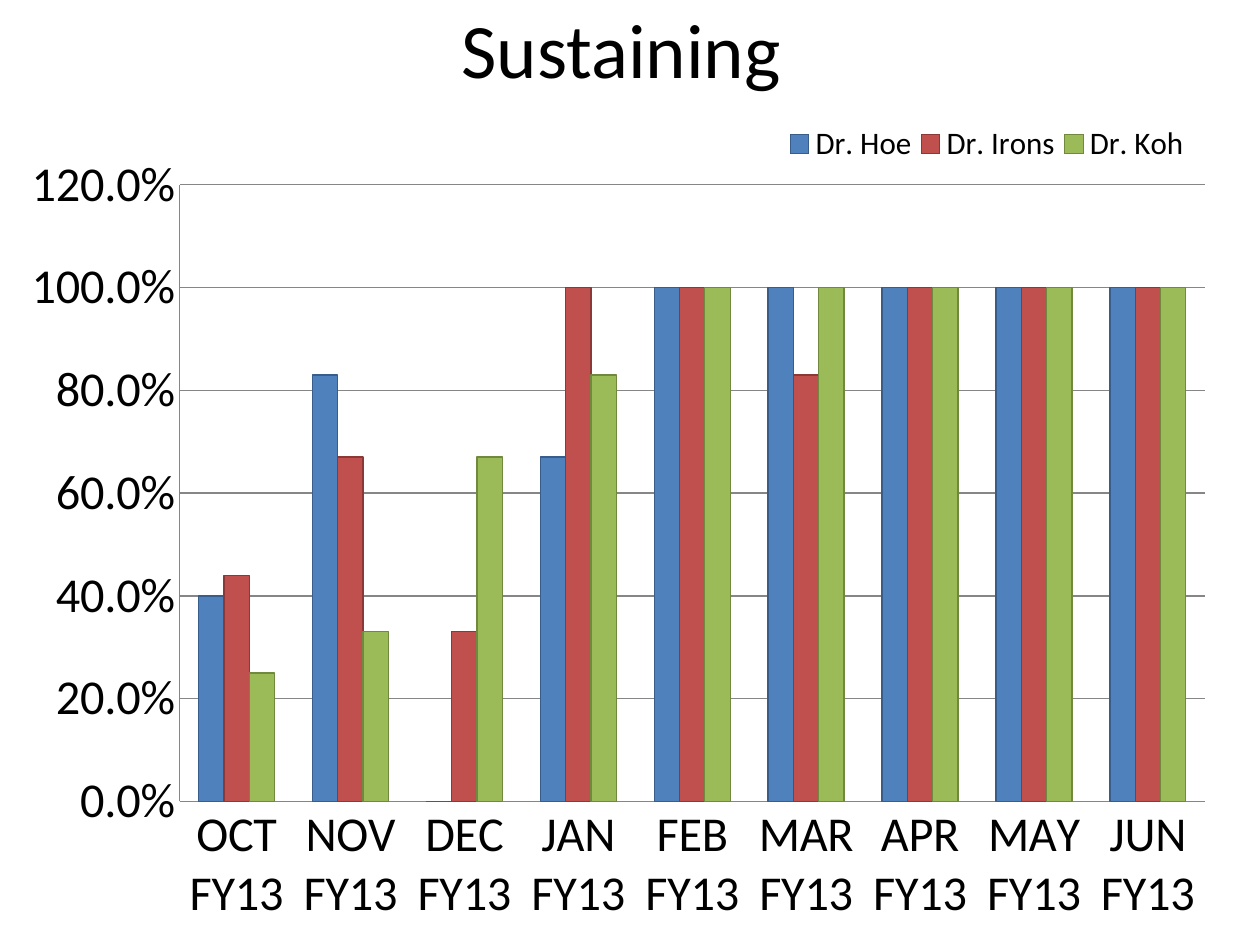
from dataclasses import dataclass

from lxml import etree
from pptx import Presentation
from pptx.chart.data import CategoryChartData
from pptx.dml.color import RGBColor
from pptx.enum.chart import XL_CHART_TYPE as ChartType
from pptx.enum.chart import XL_LEGEND_POSITION as LegendPos
from pptx.enum.chart import XL_TICK_MARK as TickMark
from pptx.enum.text import MSO_ANCHOR as Anchor
from pptx.enum.text import PP_ALIGN as Align
from pptx.oxml.ns import qn
from pptx.util import Inches, Pt


@dataclass(frozen=True)
class Theme:
    font: str = "Calibri"
    text: str = "000000"
    rule: str = "868686"
    title_size: int = 44
    axis_size: int = 28
    legend_size: int = 18
    fills: tuple = ("4F81BD", "C0504D", "9BBB59")
    outlines: tuple = ("385D8A", "8C3836", "71893F")


THEME = Theme()
WIDTH, HEIGHT = Inches(10), Inches(7.5)
MONTHS = ("OCT", "NOV", "DEC", "JAN", "FEB", "MAR", "APR", "MAY", "JUN")
SCORES = {
    "Dr. Hoe": (0.4, 0.83, 0, 0.67, 1, 1, 1, 1, 1),
    "Dr. Irons": (0.44, 0.67, 0.33, 1, 1, 0.83, 1, 1, 1),
    "Dr. Koh": (0.25, 0.33, 0.67, 0.83, 1, 1, 1, 1, 1),
}


def set_font(font, size):
    font.name = THEME.font
    font.size = Pt(size)
    font.bold = False
    font.color.rgb = RGBColor.from_string(THEME.text)


def set_line(line, color):
    line.color.rgb = RGBColor.from_string(color)
    line.width = Pt(0.75)


def set_layout(parent, index, box, inner=False):
    for old in parent.findall(qn("c:layout")):
        parent.remove(old)
    layout = etree.Element(qn("c:layout"))
    manual = etree.SubElement(layout, qn("c:manualLayout"))
    settings = [("layoutTarget", "inner")] if inner else []
    settings += [("xMode", "edge"), ("yMode", "edge"), *zip("xywh", box)]
    for tag, value in settings:
        etree.SubElement(manual, qn(f"c:{tag}")).set("val", str(value))
    parent.insert(index, layout)


def add_title(slide, text):
    s = slide.shapes.title
    s.left, s.top = 0, Inches(-0.25)
    s.width, s.height = WIDTH, Inches(1.25)
    tf = s.text_frame
    tf.text = text
    tf.vertical_anchor = Anchor.MIDDLE
    p = tf.paragraphs[0]
    p.alignment = Align.CENTER
    set_font(p.runs[0].font, THEME.title_size)


def style_axis(axis):
    axis.major_tick_mark = axis.minor_tick_mark = TickMark.NONE
    set_font(axis.tick_labels.font, THEME.axis_size)
    set_line(axis.format.line, THEME.rule)


def style_value_axis(axis):
    style_axis(axis)
    axis.minimum_scale, axis.maximum_scale, axis.major_unit = 0, 1.2, 0.2
    axis.tick_labels.number_format = "[$-10409]#,##0.0#%"
    axis.tick_labels.number_format_is_linked = False
    axis.has_major_gridlines = True
    set_line(axis.major_gridlines.format.line, THEME.rule)


def style_series(plot):
    plot.gap_width, plot.overlap = 150, 0
    plot.vary_by_categories = False
    for series, fill, outline in zip(plot.series, THEME.fills, THEME.outlines):
        series.invert_if_negative = False
        series.format.fill.solid()
        series.format.fill.fore_color.rgb = RGBColor.from_string(fill)
        set_line(series.format.line, outline)


def add_legend(chart):
    chart.has_legend = True
    legend = chart.legend
    legend.position = LegendPos.RIGHT
    legend.include_in_layout = False
    set_font(legend.font, THEME.legend_size)
    set_layout(chart.element.find(".//" + qn("c:legend")), 1, (0.62, 0.03, 0.35, 0.06))


def add_column_chart(slide):
    data = CategoryChartData(number_format="0.0%")
    data.categories = [f"{month} FY13" for month in MONTHS]
    for name, values in SCORES.items():
        data.add_series(name, values)
    box = (Inches(0.25), HEIGHT // 10, int(WIDTH * 0.95), Inches(6.58))
    chart = slide.shapes.add_chart(ChartType.COLUMN_CLUSTERED, *box, data).chart
    chart.has_title = False
    set_font(chart.font, THEME.legend_size)
    style_axis(chart.category_axis)
    style_value_axis(chart.value_axis)
    style_series(chart.plots[0])
    add_legend(chart)
    plot_area = chart.element.find(".//" + qn("c:plotArea"))
    set_layout(plot_area, 0, (0.11, 0.11, 0.87, 0.75), inner=True)


def main():
    prs = Presentation()
    prs.slide_width, prs.slide_height = WIDTH, HEIGHT
    slide = prs.slides.add_slide(prs.slide_layouts[5])
    add_column_chart(slide)
    add_title(slide, "Sustaining ")
    prs.save("out.pptx")


if __name__ == "__main__":
    main()
